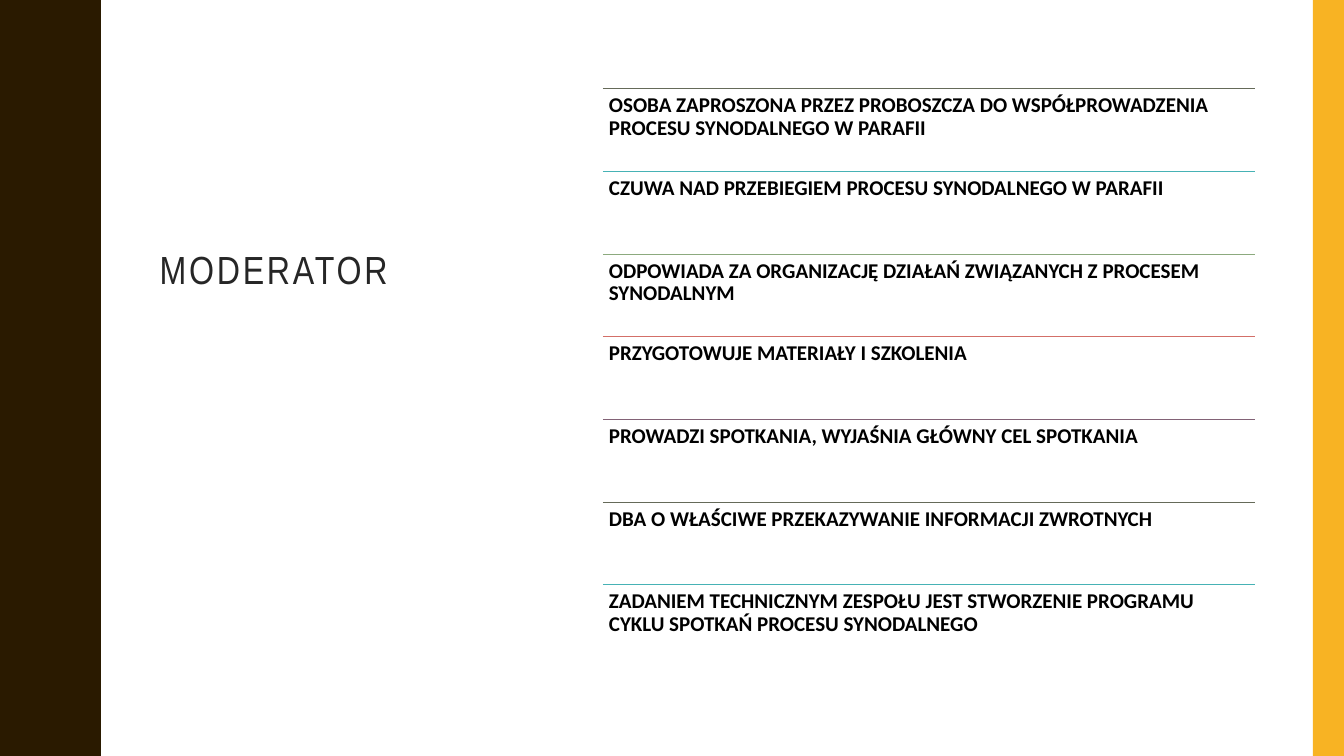
from pptx import Presentation
from pptx.dml.color import RGBColor
from pptx.enum.shapes import MSO_CONNECTOR, MSO_SHAPE
from pptx.enum.text import MSO_ANCHOR, PP_ALIGN
from pptx.oxml.ns import qn
from pptx.util import Inches, Pt
from lxml import etree

STRAIGHT = MSO_CONNECTOR.STRAIGHT
RECTANGLE = MSO_SHAPE.RECTANGLE
TOP = MSO_ANCHOR.TOP
LEFT, CENTER = PP_ALIGN.LEFT, PP_ALIGN.CENTER

COLORS = {
    "brown": "2A1A00", "gold": "F8B323", "title": "262626", "text": "000000",
    "olive": "656A59", "teal": "46B2B5", "green": "8CAA7E",
    "red": "D36F68", "plum": "826276",
}
RULE_COLORS = ["olive", "teal", "green", "red", "plum"]

DUTIES = [
    "OSOBA ZAPROSZONA PRZEZ PROBOSZCZA DO WSPÓŁPROWADZENIA PROCESU SYNODALNEGO W PARAFII",
    "CZUWA NAD PRZEBIEGIEM PROCESU SYNODALNEGO W PARAFII",
    "ODPOWIADA ZA ORGANIZACJĘ DZIAŁAŃ ZWIĄZANYCH Z PROCESEM SYNODALNYM",
    "PRZYGOTOWUJE MATERIAŁY I SZKOLENIA",
    "PROWADZI SPOTKANIA, WYJAŚNIA GŁÓWNY CEL SPOTKANIA",
    "DBA O WŁAŚCIWE PRZEKAZYWANIE INFORMACJI ZWROTNYCH",
    "ZADANIEM TECHNICZNYM ZESPOŁU JEST STWORZENIE PROGRAMU CYKLU SPOTKAŃ PROCESU SYNODALNEGO",
]
LIST_LEFT, LIST_TOP, LIST_WIDTH, ROW_HEIGHT = 5.98, 0.88, 6.47, 0.82

SLIDE_HEIGHT = 7.5
WAVE_LENGTH = 1.5
WAVE_COUNT = 5
# Edge of the wave from a trough to the next crest
HALF_WAVE = [
    (0.78, 0), (0.78, 0.07), (0.79, 0.14), (0.8, 0.2), (0.81, 0.25),
    (0.83, 0.29), (0.85, 0.33), (0.87, 0.38), (0.89, 0.42), (0.91, 0.46),
    (0.93, 0.5), (0.95, 0.55), (0.96, 0.61), (0.97, 0.68), (0.97, 0.75),
]


def color(name):
    return RGBColor.from_string(COLORS[name])


def fill_plain(shape, name):
    shape.shadow.inherit = False
    shape.fill.solid()
    shape.fill.fore_color.rgb = color(name)
    shape.line.fill.background()


def add_wavy_band(page):
    falling = [(x, WAVE_LENGTH - y) for x, y in reversed(HALF_WAVE[:-1])]
    wave = HALF_WAVE + falling
    edge = [(x, y + number * WAVE_LENGTH) for number in range(WAVE_COUNT) for x, y in wave]
    outline = page.shapes.build_freeform(0, 0, scale=Inches(1))
    outline.add_line_segments(edge + [(0, SLIDE_HEIGHT)], close=True)
    fill_plain(outline.convert_to_shape(), "brown")


def add_side_bar(page):
    bar = page.shapes.add_shape(
        RECTANGLE, Inches(13.02), Inches(0), Inches(0.31), Inches(SLIDE_HEIGHT))
    fill_plain(bar, "gold")


def add_rule(page, left, top, width, name):
    rule = page.shapes.add_connector(
        STRAIGHT, Inches(left), Inches(top), Inches(left + width), Inches(top))
    rule.line.color.rgb = color(name)
    rule.line.width = Pt(0.5)
    etree.SubElement(rule._element.spPr, qn("a:effectLst"))


def add_text(page, text, left, top, width, height, insets, font, size, name,
             align=LEFT, bold=False, spacing=0):
    """Add one paragraph; insets are (side, top) in inches, spacing is in points."""
    box = page.shapes.add_textbox(Inches(left), Inches(top), Inches(width), Inches(height))
    frame = box.text_frame
    frame.word_wrap = True
    frame.vertical_anchor = TOP
    side, above = insets
    frame.margin_left = frame.margin_right = Inches(side)
    frame.margin_top, frame.margin_bottom = Inches(above), Inches(0.05)
    para = frame.paragraphs[0]
    para.alignment = align
    para.line_spacing = 0.9
    span = para.add_run()
    span.text = text
    span.font.name = font
    span.font.size = Pt(size)
    span.font.bold = bold
    span.font.color.rgb = color(name)
    if spacing:
        span.font._element.set("spc", str(spacing * 100))


def add_duties(page):
    for row, duty in enumerate(DUTIES):
        top = LIST_TOP + row * ROW_HEIGHT
        add_rule(page, LIST_LEFT, top, LIST_WIDTH, RULE_COLORS[row % len(RULE_COLORS)])
        add_text(page, duty, LIST_LEFT, top, LIST_WIDTH, ROW_HEIGHT, (0.06, 0.06),
                 "Calibri", 15, "text", bold=True)


def main():
    deck = Presentation()
    deck.slide_width, deck.slide_height = Inches(13.33), Inches(SLIDE_HEIGHT)
    page = deck.slides.add_slide(deck.slide_layouts[6])
    add_wavy_band(page)
    add_side_bar(page)
    add_text(page, "MODERATOR", 1.15, 1.15, 3.13, 5.24, (0.1, 1.34),
             "Arial Narrow", 28, "title", align=CENTER, spacing=2)
    add_duties(page)
    deck.save("out.pptx")


if __name__ == "__main__":
    main()
